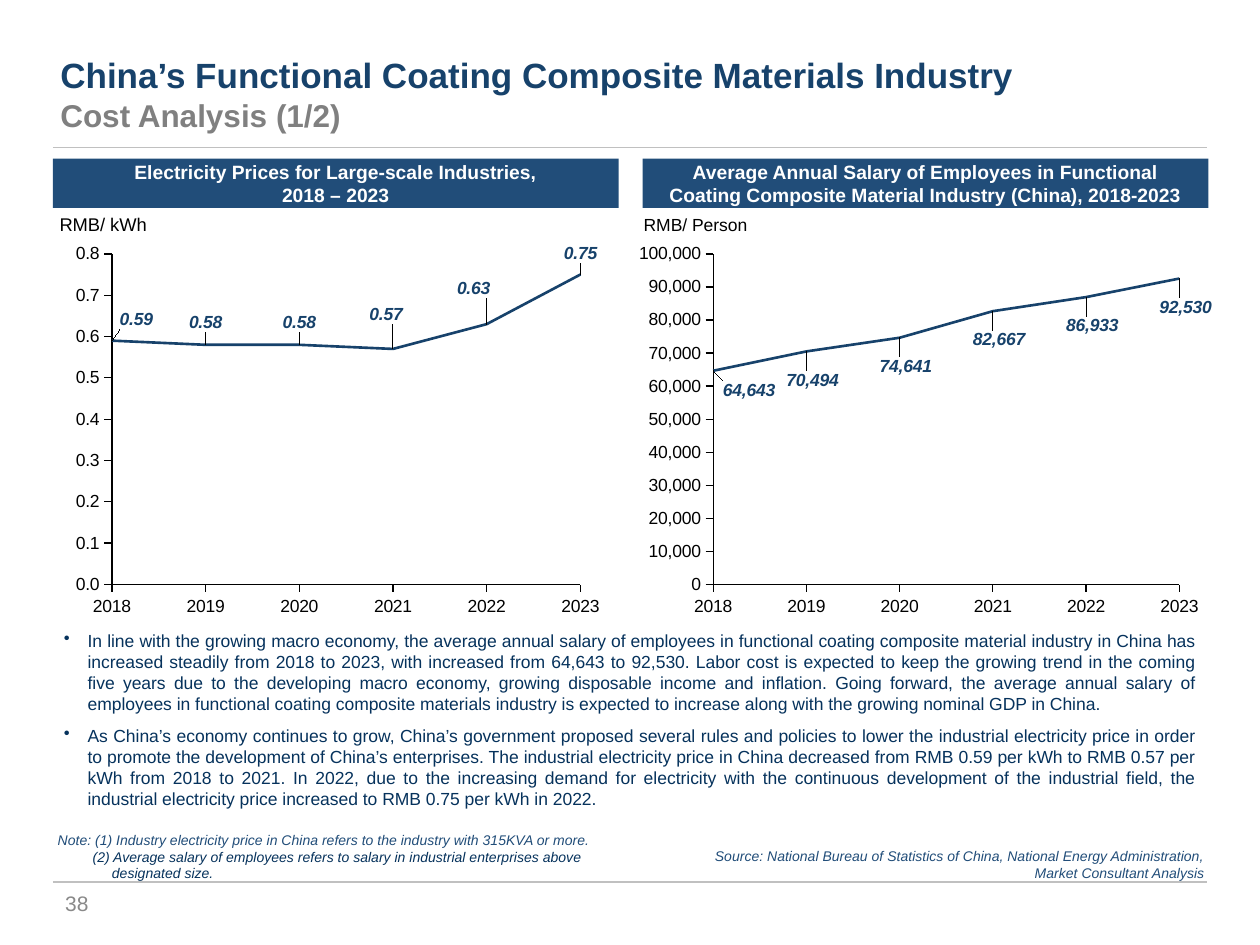
from dataclasses import dataclass

from lxml import etree
from pptx import Presentation
from pptx.chart.data import XyChartData
from pptx.dml.color import RGBColor
from pptx.enum.chart import XL_CHART_TYPE, XL_LABEL_POSITION, XL_TICK_MARK
from pptx.enum.shapes import MSO_CONNECTOR, MSO_SHAPE
from pptx.enum.text import MSO_ANCHOR, PP_ALIGN
from pptx.oxml import parse_xml
from pptx.oxml.ns import nsdecls, qn
from pptx.util import Pt

LEFT, RIGHT, CENTER, JUSTIFY = (
    PP_ALIGN.LEFT, PP_ALIGN.RIGHT, PP_ALIGN.CENTER, PP_ALIGN.JUSTIFY)
TOP, MIDDLE, BOTTOM = MSO_ANCHOR.TOP, MSO_ANCHOR.MIDDLE, MSO_ANCHOR.BOTTOM
ABOVE, BELOW = XL_LABEL_POSITION.ABOVE, XL_LABEL_POSITION.BELOW
OUTSIDE = XL_TICK_MARK.OUTSIDE
SCATTER = XL_CHART_TYPE.XY_SCATTER_LINES_NO_MARKERS

NAVY, BLUE, DARK = "17426B", "214D79", "06325C"
BLACK, WHITE, GRAY, SILVER, PAGE_GRAY = "000000", "FFFFFF", "808080", "C0C0C0", "898989"
YEARS = range(2018, 2024)


@dataclass
class Panel:
    heading: list[str]
    left: float           # heading bar
    unit: str
    unit_box: tuple       # left, width, text size
    chart_box: tuple      # left, width
    plot: tuple           # x, width as shares of the chart
    top_value: float
    step: float
    axis_format: str
    label_format: str
    label_side: XL_LABEL_POSITION
    values: list[float]
    offsets: list[tuple]  # label shift from its usual place, points


PANELS = [
    Panel(["Electricity Prices for Large-scale Industries,", "2018 – 2023"], 30.2,
          "RMB/ kWh", (30.2, 57.6, 10.5), (31.7, 322.6), (0.1, 0.83),
          0.8, 0.1, "#,##0.0", "0.00", ABOVE,
          [0.59, 0.58, 0.58, 0.57, 0.63, 0.75],
          [(14, -3.5), (0, -4), (0, -4), (-4, -11), (-7.5, -12), (0, -3.5)]),
    Panel(["Average Annual Salary of Employees in Functional "
           "Coating Composite Material Industry (China), 2018-2023"], 367.2,
          "RMB/ Person", (352.8, 89.3, 10), (353.5, 344.2), (0.157, 0.774),
          100000, 10000, "#,##0", "#,##0", BELOW,
          [64643, 70494, 74641, 82667, 86933, 92530],
          [(20.5, 3)] + [(3.5, 8)] * 5),
]

BULLETS = [
    "In line with the growing macro economy, the average annual salary of employees in "
    "functional coating composite material industry in China has increased steadily from "
    "2018 to 2023, with increased from 64,643 to 92,530. Labor cost is expected to keep the "
    "growing trend in the coming five years due to the developing macro economy, growing "
    "disposable income and inflation. Going forward, the average annual salary of employees "
    "in functional coating composite materials industry is expected to increase along with "
    "the growing nominal GDP in China.",
    "As China’s economy continues to grow, China’s government proposed several rules and "
    "policies to lower the industrial electricity price in order to promote the development "
    "of China’s enterprises. The industrial electricity price in China decreased from RMB "
    "0.59 per kWh to RMB 0.57 per kWh from 2018 to 2021. In 2022, due to the increasing "
    "demand for electricity with the continuous development of the industrial field, the "
    "industrial electricity price increased to RMB 0.75 per kWh in 2022.",
]


def rgb(color: str) -> RGBColor:
    return RGBColor.from_string(color)


def style(font, size: float, color: str, bold=False, italic=False) -> None:
    font.name, font.size = "Arial", Pt(size)
    font.bold, font.italic = bold, italic
    font.color.rgb = rgb(color)


def write(tf, text: str, *, size: float, color: str, align=LEFT, bold=False, italic=False,
          indent: float = 0, hanging: float = 0, bullet="", after: float = 0):
    """Add a paragraph; the first call fills the one already there."""
    p = tf.paragraphs[0] if not tf.paragraphs[0].runs else tf.add_paragraph()
    p.alignment, p.space_after = align, Pt(after)
    pPr = p._p.get_or_add_pPr()
    if indent:
        pPr.set("marL", str(Pt(indent)))
        pPr.set("indent", str(-Pt(hanging)))
    if bullet:
        etree.SubElement(pPr, qn("a:buChar")).set("char", bullet)
    r = p.add_run()
    r.text = text
    style(r.font, size, color, bold, italic)
    return p


def textbox(s, left, top, width, height, anchor=TOP, wrap=True, margin=None):
    tf = s.shapes.add_textbox(Pt(left), Pt(top), Pt(width), Pt(height)).text_frame
    tf.word_wrap, tf.vertical_anchor = wrap, anchor
    if margin is not None:
        tf.margin_left = tf.margin_right = tf.margin_top = tf.margin_bottom = Pt(margin)
    return tf


def rule(s, top: float) -> None:
    ln = s.shapes.add_connector(MSO_CONNECTOR.STRAIGHT, Pt(30.2), Pt(top), Pt(689.8), Pt(top))
    ln.line.color.rgb, ln.line.width = rgb(SILVER), Pt(0.75)
    etree.SubElement(ln._element.spPr, qn("a:effectLst"))


def manual_layout(**settings):
    items = "".join(f'<c:{key} val="{val}"/>' for key, val in settings.items())
    return parse_xml(f'<c:layout {nsdecls("c")}><c:manualLayout>{items}'
                     '</c:manualLayout></c:layout>')


def format_axis(axis, low, high, step, number_format: str) -> None:
    axis.minimum_scale, axis.maximum_scale, axis.major_unit = low, high, step
    axis.has_major_gridlines = False
    axis.major_tick_mark = OUTSIDE
    axis.tick_labels.number_format = number_format
    axis.tick_labels.number_format_is_linked = False
    style(axis.tick_labels.font, 10, BLACK)
    axis.format.line.color.rgb, axis.format.line.width = rgb(BLACK), Pt(0.75)


def label_points(series, panel: Panel, width: float, height: float) -> None:
    for i, (dx, dy) in enumerate(panel.offsets):
        label = series.points[i].data_label
        style(label.font, 10, NAVY, bold=True, italic=True)
        label.position = panel.label_side
        dLbl = series._element.dLbls.findall(qn("c:dLbl"))[i]
        dLbl.insert(1, manual_layout(x=round(dx / width, 4), y=round(dy / height, 4)))
        dLbl.insert(2, parse_xml(f'<c:numFmt {nsdecls("c")} sourceLinked="0" '
                                 f'formatCode="{panel.label_format}"/>'))
    # Leader lines from the points to the shifted labels
    series._element.dLbls.append(parse_xml(
        f'<c:extLst {nsdecls("c")}><c:ext uri="{{CE6537A1-D6FC-4f65-9D91-7224C49458BB}}" '
        'xmlns:c15="http://schemas.microsoft.com/office/drawing/2012/chart">'
        '<c15:showLeaderLines val="1"/></c:ext></c:extLst>'))


def draw_chart(s, panel: Panel) -> None:
    (left, width), height = panel.chart_box, 236.2
    data = XyChartData()
    points = data.add_series("Series 1")
    for year, value in zip(YEARS, panel.values):
        points.add_data_point(year, value)
    chart = s.shapes.add_chart(SCATTER, Pt(left), Pt(127.4), Pt(width), Pt(height), data).chart
    chart.has_legend = chart.has_title = False
    style(chart.font, 10, BLACK)
    format_axis(chart.category_axis, YEARS[0], YEARS[-1], 1, "0")
    format_axis(chart.value_axis, 0, panel.top_value, panel.step, panel.axis_format)

    plot_area = chart._chartSpace.chart.plotArea
    for old in plot_area.findall(qn("c:layout")):
        plot_area.remove(old)
    x, w = panel.plot
    plot_area.insert(0, manual_layout(layoutTarget="inner", xMode="edge", yMode="edge",
                                      x=x, y=0.075, w=w, h=0.8))
    series = chart.plots[0].series[0]
    series.smooth = False
    series.format.line.color.rgb, series.format.line.width = rgb(NAVY), Pt(1.5)
    label_points(series, panel, width, height)


def draw_panel(s, panel: Panel) -> None:
    sp = s.shapes.add_shape(MSO_SHAPE.RECTANGLE, Pt(panel.left), Pt(90.7), Pt(323.3), Pt(28.1))
    sp.shadow.inherit = False
    sp.fill.solid()
    sp.fill.fore_color.rgb = rgb(BLUE)
    sp.line.fill.background()
    sp.text_frame.word_wrap, sp.text_frame.vertical_anchor = True, MIDDLE
    for line in panel.heading:
        write(sp.text_frame, line, size=11, color=WHITE, align=CENTER, bold=True)
    draw_chart(s, panel)
    left, width, size = panel.unit_box
    tf = textbox(s, left, 120.2, width, 14.4, BOTTOM, wrap=False, margin=0)
    write(tf, panel.unit, size=size, color=BLACK, align=CENTER)


def main() -> None:
    prs = Presentation()
    prs.slide_width, prs.slide_height = Pt(720), Pt(540)
    s = prs.slides.add_slide(prs.slide_layouts[6])

    # Rules and title
    rule(s, 84.2)
    rule(s, 504)
    p = write(textbox(s, 27.4, 29.5, 684, 48.2, MIDDLE),
              "China’s Functional Coating Composite Materials Industry",
              size=20, color=NAVY, bold=True)
    p.add_line_break()
    r = p.add_run()
    r.text = "Cost Analysis (1/2)"
    style(r.font, 18, GRAY, bold=True)

    # Charts with headings
    for panel in PANELS:
        draw_panel(s, panel)

    # Commentary
    tf = textbox(s, 29.5, 356.4, 660.2, 110.2)
    for text in BULLETS:
        write(tf, text, size=10, color=DARK, align=JUSTIFY, indent=13.5, hanging=13.5,
              bullet="•", after=6)

    # Notes, source and page number
    tf = textbox(s, 25.9, 471.6, 369.4, 36)
    for text, color, indent in (
            ("Note: (1) Industry electricity price in China refers to the industry with "
             "315KVA or more.", BLUE, 0),
            ("(2) Average salary of employees refers to salary in industrial enterprises above",
             DARK, 20),
            ("designated size.", DARK, 31)):
        write(tf, text, size=8, color=color, italic=True, indent=indent)
    tf = textbox(s, 339.8, 481, 355.7, 26.6)
    for text in ("Source: National Bureau of Statistics of China, National Energy Administration,",
                 "Market Consultant Analysis"):
        write(tf, text, size=8, color=BLUE, align=RIGHT, italic=True)
    write(textbox(s, 30.2, 505.4, 174.2, 34.6), "38", size=12, color=PAGE_GRAY)

    prs.save("out.pptx")


if __name__ == "__main__":
    main()
